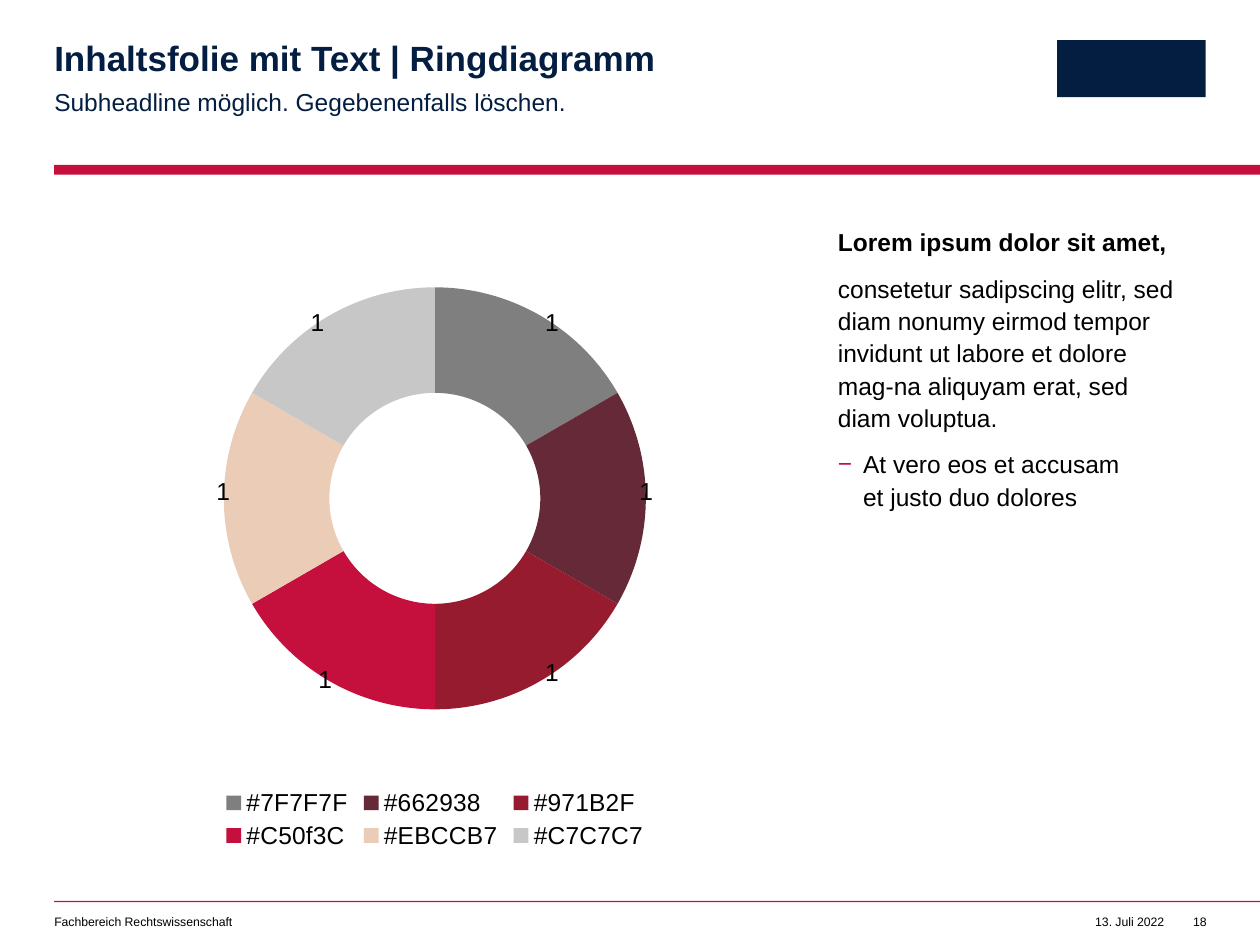
from pptx import Presentation
from pptx.chart.data import CategoryChartData
from pptx.dml.color import RGBColor
from pptx.enum.chart import XL_CHART_TYPE, XL_LEGEND_POSITION
from pptx.enum.shapes import MSO_SHAPE
from pptx.enum.text import MSO_ANCHOR, MSO_AUTO_SIZE, PP_ALIGN
from pptx.oxml import parse_xml
from pptx.oxml.ns import nsdecls, qn
from pptx.util import Pt
from lxml.etree import SubElement

FONT = "Arial"
NAVY, RED, BLACK = "041E42", "C50F3C", "000000"
LEFT, RIGHT, PAGE_WIDTH, PAGE_HEIGHT = 31, 689.5, 720, 540

TITLE = "Inhaltsfolie mit Text | Ringdiagramm"
SUBHEAD = "Subheadline möglich. Gegebenenfalls löschen."
BODY = [
    ("Lorem ipsum dolor sit amet,", {"bold": True}),
    ("consetetur sadipscing elitr, sed diam nonumy eirmod tempor invidunt "
     "ut labore et dolore mag-na aliquyam erat, sed diam voluptua.", {}),
    ("At vero eos et accusam\vet justo duo dolores", {"bullet": "−", "level": 1}),
]
FOOTER = [
    ("Fachbereich Rechtswissenschaft", LEFT, 323, PP_ALIGN.LEFT),
    ("13. Juli 2022", 614, 51.3, PP_ALIGN.RIGHT),
    ("18", 675, RIGHT - 675, PP_ALIGN.RIGHT),
]
SLICES = [
    ("#7F7F7F", 1, (0.05, -0.06)),
    ("#662938", 1, (0.07, -0.01)),
    ("#971B2F", 1, (0.05, 0.06)),
    ("#C50f3C", 1, (-0.04, 0.07)),
    ("#EBCCB7", 1, (-0.07, -0.01)),
    ("#C7C7C7", 1, (-0.05, -0.06)),
]
PLOT_AREA = {"x": 0.13, "y": 0.1, "w": 0.74, "h": 0.67}
HOLE_SIZE = 80


def color(value):
    return RGBColor.from_string(value.lstrip("#").upper())


def format_font(font, size, fill=BLACK, bold=False):
    font.name, font.size, font.bold = FONT, Pt(size), bold
    font.color.rgb = color(fill)


def write_para(para, text, size=14, fill=BLACK, bold=False, align=PP_ALIGN.LEFT,
               line=1.0, after=0, bullet=None, level=0):
    para.text, para.alignment, para.level = text, align, level
    para.line_spacing, para.space_before, para.space_after = line, Pt(0), Pt(after)
    for span in para.runs:
        format_font(span.font, size, fill, bold)
    properties = para._p.get_or_add_pPr()
    indent = Pt(14.4) if bullet else 0
    properties.set("marL", str(indent))
    properties.set("indent", str(-indent))
    if bullet:
        bullet_color = SubElement(properties, qn("a:buClr"))
        SubElement(bullet_color, qn("a:srgbClr"), val=RED)
        SubElement(properties, qn("a:buFont"), typeface=FONT)
        SubElement(properties, qn("a:buChar"), char=bullet)
    else:
        SubElement(properties, qn("a:buNone"))


def prepare(box, left, top, width, height, inset_right=0):
    box.left, box.top, box.width, box.height = map(Pt, (left, top, width, height))
    frame = box.text_frame
    frame.margin_left = frame.margin_top = frame.margin_bottom = 0
    frame.margin_right = Pt(inset_right)
    frame.word_wrap, frame.auto_size = True, MSO_AUTO_SIZE.NONE
    frame.vertical_anchor = MSO_ANCHOR.TOP
    return frame


def add_bar(page, left, top, width, height, fill):
    bar = page.shapes.add_shape(MSO_SHAPE.RECTANGLE, *map(Pt, (left, top, width, height)))
    bar.shadow.inherit = False
    bar.fill.solid()
    bar.fill.fore_color.rgb = color(fill)
    bar.line.fill.background()


def manual_layout(mode="", **values):
    target = '<c:layoutTarget val="inner"/>' if mode else ""
    modes = "".join(f'<c:{axis}Mode val="{mode}"/>' for axis in "xy") if mode else ""
    numbers = "".join(f'<c:{key} val="{value}"/>' for key, value in values.items())
    return parse_xml(f'<c:layout {nsdecls("c")}><c:manualLayout>{target}{modes}{numbers}'
                     "</c:manualLayout></c:layout>")


def add_ring_chart(page, left, top, width, height):
    names, values, offsets = zip(*SLICES)
    data = CategoryChartData()
    data.categories = names
    data.add_series("Series 1", values)
    chart = page.shapes.add_chart(
        XL_CHART_TYPE.DOUGHNUT, *map(Pt, (left, top, width, height)), data).chart
    format_font(chart.font, 10)
    chart.has_title = False
    chart.has_legend = True
    chart.legend.position = XL_LEGEND_POSITION.BOTTOM
    chart.legend.include_in_layout = False
    format_font(chart.legend.font, 14)

    plot = chart.plots[0]
    plot.vary_by_categories = True
    series = plot.series[0]
    labels = series.data_labels
    labels.show_value = True
    format_font(labels.font, 14)
    for index, (name, offset) in enumerate(zip(names, offsets)):
        point = series.points[index]
        point.format.fill.solid()
        point.format.fill.fore_color.rgb = color(name)
        format_font(point.data_label.font, 14)
    for label, (x, y) in zip(chart._chartSpace.iter(qn("c:dLbl")), offsets):
        label.insert(1, manual_layout(x=x, y=y))

    area = chart._chartSpace.find(".//" + qn("c:plotArea"))
    for old in area.findall(qn("c:layout")):
        area.remove(old)
    area.insert(0, manual_layout("edge", **PLOT_AREA))
    area.find(".//" + qn("c:holeSize")).set("val", str(HOLE_SIZE))


def main():
    deck = Presentation()
    deck.slide_width, deck.slide_height = Pt(PAGE_WIDTH), Pt(PAGE_HEIGHT)
    page = deck.slides.add_slide(deck.slide_layouts[3])
    title, subhead, body = page.placeholders

    add_bar(page, LEFT, 94.3, PAGE_WIDTH - LEFT, 5.5, RED)
    add_bar(page, LEFT, 514.8, PAGE_WIDTH - LEFT, 0.75, RED)
    add_bar(page, 604, 23, 85, 32.5, NAVY)

    frame = prepare(title, LEFT, 23.8, 404, 21.6)
    write_para(frame.paragraphs[0], TITLE, size=20, fill=NAVY, bold=True, line=0.9)
    frame = prepare(subhead, LEFT, 48.2, 404, 17.3, inset_right=28)
    write_para(frame.paragraphs[0], SUBHEAD, fill=NAVY, line=1.1, after=8)
    frame = prepare(body, 478.8, 128.2, 211, 360, inset_right=14.4)
    for index, (text, style) in enumerate(BODY):
        para = frame.add_paragraph() if index else frame.paragraphs[0]
        write_para(para, text, line=1.1, after=8, **style)

    for text, left, width, align in FOOTER:
        box = page.shapes.add_textbox(0, 0, 0, 0)
        frame = prepare(box, left, 522.7, width, 8.6)
        write_para(frame.paragraphs[0], text, size=7, align=align)

    add_ring_chart(page, LEFT, 128.2, 435, 360)
    deck.save("out.pptx")


if __name__ == "__main__":
    main()
